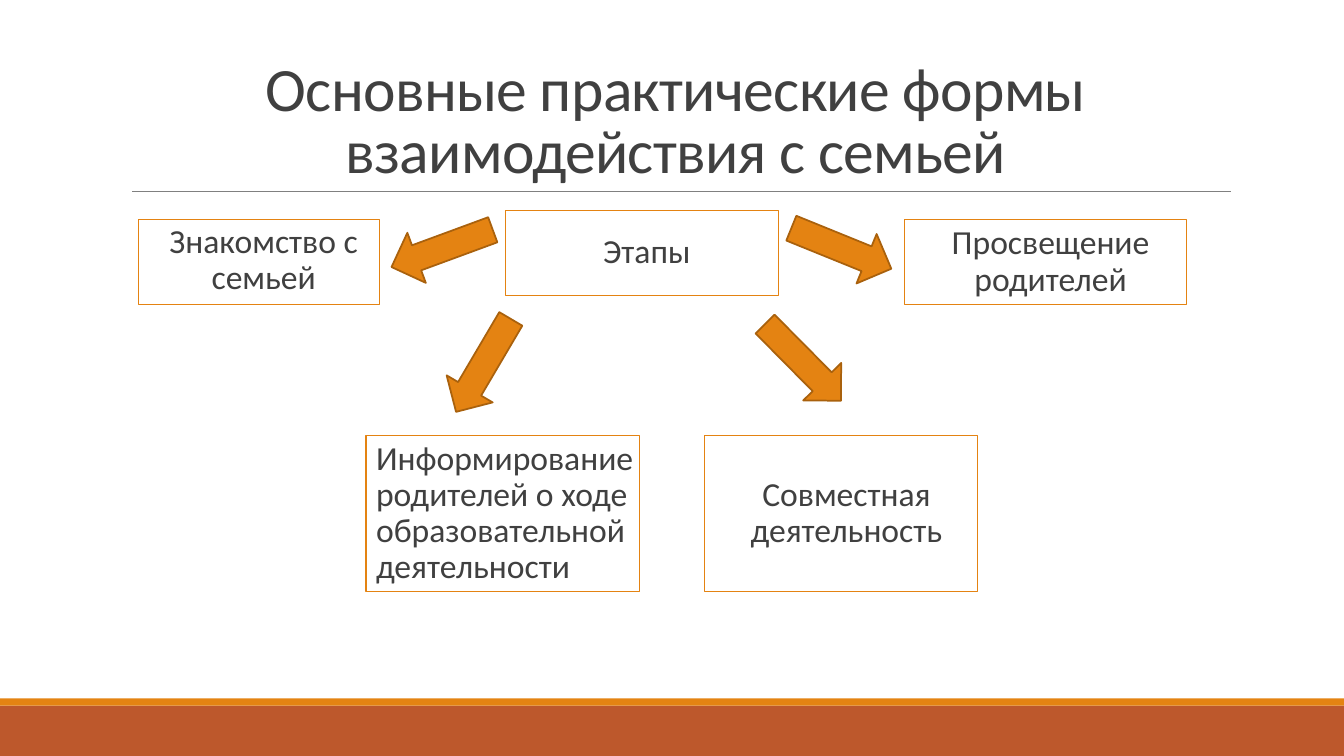
from dataclasses import dataclass

import pptx
import pptx.dml.color
import pptx.enum.shapes
import pptx.enum.text
import pptx.oxml
import pptx.oxml.ns
import pptx.util
from pptx.util import Inches

SHAPES = pptx.enum.shapes.MSO_SHAPE
ALIGN = pptx.enum.text.PP_ALIGN
ANCHOR = pptx.enum.text.MSO_ANCHOR


@dataclass(frozen=True)
class Theme:
    font: str = "Calibri"
    title_size: float = 44
    body_size: float = 24
    text: str = "404040"
    accent: str = "E48312"
    accent_edge: str = "A9610D"
    footer: str = "BD582C"
    rule: str = "808080"


THEME = Theme()
BOX_WIDTH = 2.71
SIDE_TOP, LOWER_TOP = 2.18, 4.32
LOW_BOX, HIGH_BOX = 0.84, 1.55

STAGES = [
    ("Этапы", (5.01, 2.09, BOX_WIDTH, LOW_BOX), {}),
    ("Знакомство с семьей", (1.37, SIDE_TOP, 2.39, LOW_BOX), {"anchor": ANCHOR.TOP}),
    ("Информирование родителей о ходе образовательной деятельности",
     (3.63, LOWER_TOP, BOX_WIDTH, HIGH_BOX), {"align": ALIGN.LEFT}),
    ("Просвещение родителей", (8.97, SIDE_TOP, 2.8, LOW_BOX), {}),
    ("Совместная деятельность", (6.99, LOWER_TOP, BOX_WIDTH, HIGH_BOX), {}),
]
# left, top, rotation
ARROWS = [(4.12, 1.93, 69.8), (4.53, 3.09, 30.5), (8.08, 1.93, 292.1), (7.7, 3.06, 315.3)]


def color(value):
    return pptx.dml.color.RGBColor.from_string(value)


def write_text(shape, text, size=THEME.body_size, align=ALIGN.CENTER, anchor=ANCHOR.MIDDLE,
               side_inset=0, line_spacing=0.9, before=0, after=0, tracking=None):
    frame = shape.text_frame
    frame.word_wrap = True
    frame.auto_size = pptx.enum.text.MSO_AUTO_SIZE.NONE
    frame.vertical_anchor = anchor
    frame.margin_left = frame.margin_right = Inches(side_inset)
    frame.margin_top = frame.margin_bottom = Inches(0.05)
    para = frame.paragraphs[0]
    para.alignment = align
    para.line_spacing = line_spacing
    para.space_before = pptx.util.Pt(before)
    para.space_after = pptx.util.Pt(after)
    span = para.add_run()
    span.text = text
    span.font.name = THEME.font
    span.font.size = pptx.util.Pt(size)
    span.font.color.rgb = color(THEME.text)
    if tracking is not None:
        span.font._element.set("spc", str(round(tracking * 100)))
    return para


def add_blank_bullet(para):
    """Hang the paragraph on a blank bullet, in a font narrow enough for the 0.1 inch indent."""
    properties = para._p.get_or_add_pPr()
    properties.set("marL", str(Inches(0.1)))
    properties.set("indent", str(-Inches(0.1)))
    namespace = pptx.oxml.ns.nsdecls("a")
    for markup in (f'<a:buClr {namespace}><a:srgbClr val="{THEME.accent}"/></a:buClr>',
                   f'<a:buFont {namespace} typeface="{THEME.font}"/>',
                   f'<a:buChar {namespace} char=" "/>'):
        properties.append(pptx.oxml.parse_xml(markup))


def add_figure(page, kind, place, fill=None, line=None, line_width=0.75):
    shape = page.shapes.add_shape(kind, *map(Inches, place))
    shape.shadow.inherit = False
    if fill:
        shape.fill.solid()
        shape.fill.fore_color.rgb = color(fill)
    else:
        shape.fill.background()
    if line:
        shape.line.color.rgb = color(line)
        shape.line.width = pptx.util.Pt(line_width)
    else:
        shape.line.fill.background()
    return shape


def add_title(page, text):
    title = page.shapes.title
    title.left, title.top, title.width, title.height = map(Inches, (1.2, 0.31, 11, 1.59))
    write_text(title, text, size=THEME.title_size, anchor=ANCHOR.BOTTOM, side_inset=0.1,
               line_spacing=0.85, tracking=-0.5)


def add_rule(page, left, right, top):
    rule = page.shapes.add_connector(pptx.enum.shapes.MSO_CONNECTOR.STRAIGHT,
                                     *map(Inches, (left, top, right, top)))
    rule.line.color.rgb = color(THEME.rule)
    rule.line.width = pptx.util.Pt(0.5)
    rule._element.spPr.append(
        pptx.oxml.parse_xml(f'<a:effectLst {pptx.oxml.ns.nsdecls("a")}/>'))


def add_stage(page, text, place, **text_format):
    box = add_figure(page, SHAPES.RECTANGLE, place, line=THEME.accent)
    add_blank_bullet(write_text(box, text, before=12, after=2, **text_format))


def add_arrow(page, left, top, rotation):
    arrow = add_figure(page, SHAPES.DOWN_ARROW, (left, top, 0.53, 1.07),
                       fill=THEME.accent, line=THEME.accent_edge, line_width=1.25)
    arrow.rotation = rotation


def main():
    deck = pptx.Presentation()
    deck.slide_width, deck.slide_height = Inches(13.33), Inches(7.5)
    page = deck.slides.add_slide(deck.slide_layouts.get_by_name("Title Only"))
    add_figure(page, SHAPES.RECTANGLE, (0, 7, 13.33, 0.5), fill=THEME.footer)
    add_figure(page, SHAPES.RECTANGLE, (0, 6.93, 13.33, 0.07), fill=THEME.accent)
    add_rule(page, 1.31, 12.21, 1.9)
    add_title(page, "Основные практические формы взаимодействия с семьей")
    for text, place, text_format in STAGES:
        add_stage(page, text, place, **text_format)
    for arrow in ARROWS:
        add_arrow(page, *arrow)
    deck.save("out.pptx")


if __name__ == "__main__":
    main()
